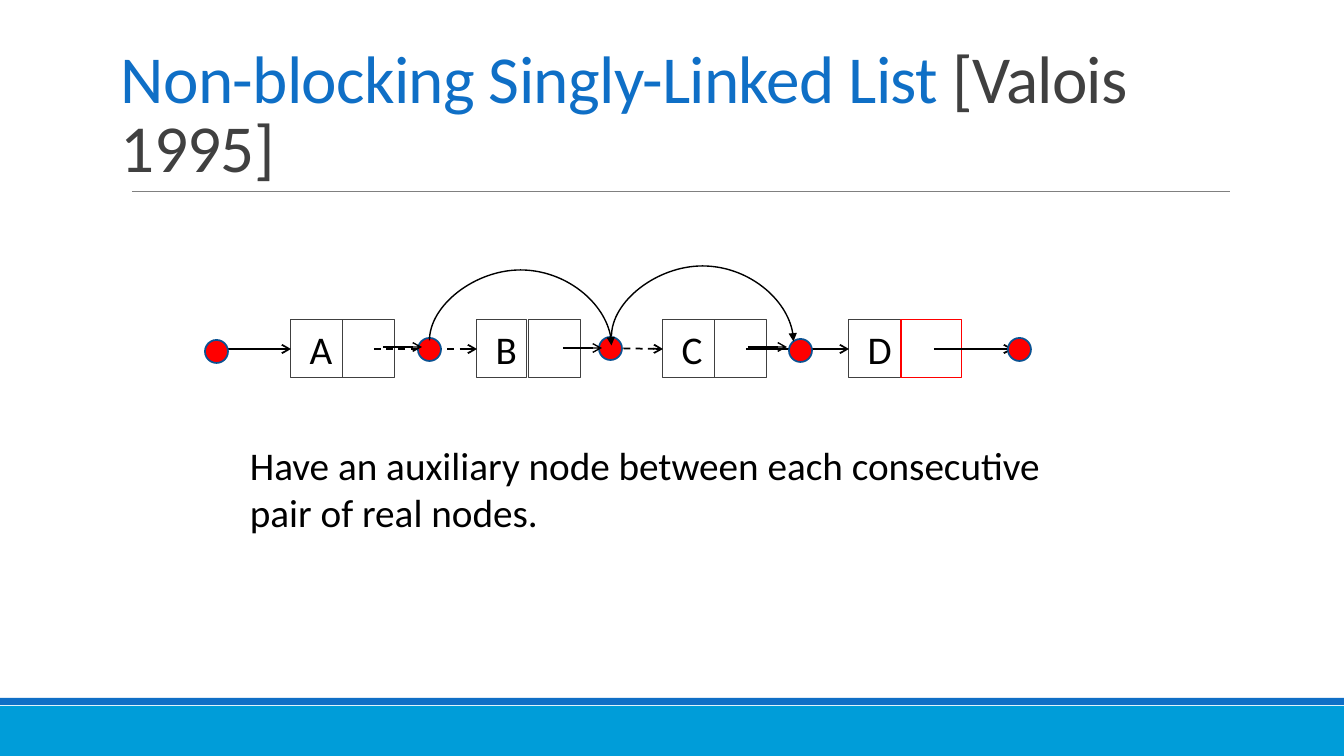
from pptx import Presentation, util as u
from pptx.dml import color
from pptx.enum import dml, shapes, text
from pptx.oxml import ns
from lxml import etree

PX = 914400 / 100.8


def px(*lengths):
    return [u.Emu(round(length * PX)) for length in lengths]


def rgb(value):
    return color.RGBColor.from_string(value)


deck = Presentation()
deck.slide_width, deck.slide_height = px(1344, 756)
slide = deck.slides.add_slide(deck.slide_layouts[6])
items = slide.shapes

for top, height, fill in [(706, 50, "009DD9"), (698, 7, "0F6FC6")]:
    band = items.add_shape(shapes.MSO_SHAPE.RECTANGLE, *px(0, top, 1344, height))
    band.shadow.inherit = False
    band.fill.solid()
    band.fill.fore_color.rgb = rgb(fill)
    band.line.fill.background()

title = items.add_textbox(*px(111, 31, 1184, 160))
title.text_frame.vertical_anchor = text.MSO_ANCHOR.BOTTOM
note = items.add_textbox(*px(240, 436, 842, 105))
for box, size, spacing, parts in [
    (title, 48, 0.85, [("Non-blocking Singly-Linked List ", "0F6FC6"), ("[Valois 1995]", "404040")]),
    (note, 28, 1, [("Have an auxiliary node between each consecutive pair of real nodes.", "000000")]),
]:
    box.text_frame.word_wrap = True
    paragraph = box.text_frame.paragraphs[0]
    paragraph.line_spacing = spacing
    for words, ink in parts:
        run = paragraph.add_run()
        run.text = words
        run.font.name, run.font.size = "Calibri", u.Pt(size)
        run.font.color.rgb = rgb(ink)
        if box is title:
            run.font._element.set("spc", "-50")

cells = []
for i, (letter, value_width, next_width, next_ink) in enumerate([
    ("A", 52, 52, "404040"), ("B", 50, 52, "404040"),
    ("C", 52, 52, "404040"), ("D", 52, 61, "FF0000"),
]):
    left = 291 + 186 * i
    for x, width, ink, label in [
        (left, value_width, "404040", " " + letter), (left + 52, next_width, next_ink, ""),
    ]:
        cell = items.add_shape(shapes.MSO_SHAPE.RECTANGLE, *px(x, 320, width, 58))
        cell.shadow.inherit = False
        cell.fill.background()
        cell.line.color.rgb = rgb(ink)
        cell.line.width = u.Pt(0.75)
        if label:
            cells.append(cell)
            cell.text_frame.word_wrap = False
            paragraph = cell.text_frame.paragraphs[0]
            paragraph.alignment = text.PP_ALIGN.LEFT
            run = paragraph.add_run()
            run.text = label
            run.font.name, run.font.size = "Calibri", u.Pt(28)
            run.font.color.rgb = rgb("000000")

STRAIGHT, CURVE = shapes.MSO_CONNECTOR.STRAIGHT, shapes.MSO_CONNECTOR.CURVE


def connect(kind, ends, width, head=None, ink="000000"):
    link = items.add_connector(kind, *px(*ends))
    link.line.color.rgb = rgb(ink)
    link.line.width = u.Pt(width)
    if head:
        etree.SubElement(link.line._get_or_add_ln(), ns.qn("a:tailEnd"), type=head)
    etree.SubElement(link._element.spPr, ns.qn("a:effectLst"))
    return link


connect(STRAIGHT, (132, 191, 1230, 191), 0.5, ink="808080")
for cell, start, y, dashed in zip(cells, (213, 374, 599, 746), (349, 349, 348, 349), (0, 1, 1, 0)):
    link = connect(STRAIGHT, (start, y, start + 78, 349), 1.25, "arrow")
    link.end_connect(cell, 1)
    if dashed:
        link.line.dash_style = dml.MSO_LINE.DASH
connect(STRAIGHT, (934, 349, 1013, 349), 1.25, "arrow")

for x, y in [(418, 338), (599, 337), (205, 340), (789, 339), (1008, 338)]:
    auxiliary = items.add_shape(shapes.MSO_SHAPE.OVAL, *px(x, y, 23, 23))
    auxiliary.shadow.inherit = False
    auxiliary.fill.solid()
    auxiliary.fill.fore_color.rgb = rgb("FF0000")
    auxiliary.line.color.rgb = rgb("0B5292")
    auxiliary.line.width = u.Pt(1.25)

for x, y in [(563, 348), (748, 347), (383, 347)]:
    connect(STRAIGHT, (x, y, x + 39, y), 1, "arrow")

for middle, top in [(702, 248), (520, 252)]:
    arc = connect(CURVE, (middle + 3, top, middle - 2, top + 182), 1, "triangle")
    arc._element.spPr.find(ns.qn("a:xfrm")).set("rot", "16200000")
    guides = arc._element.spPr.find(ns.qn("a:prstGeom")).get_or_add_avLst()
    etree.SubElement(guides, ns.qn("a:gd"), name="adj1", fmla="val -1410800")

deck.save("out.pptx")
